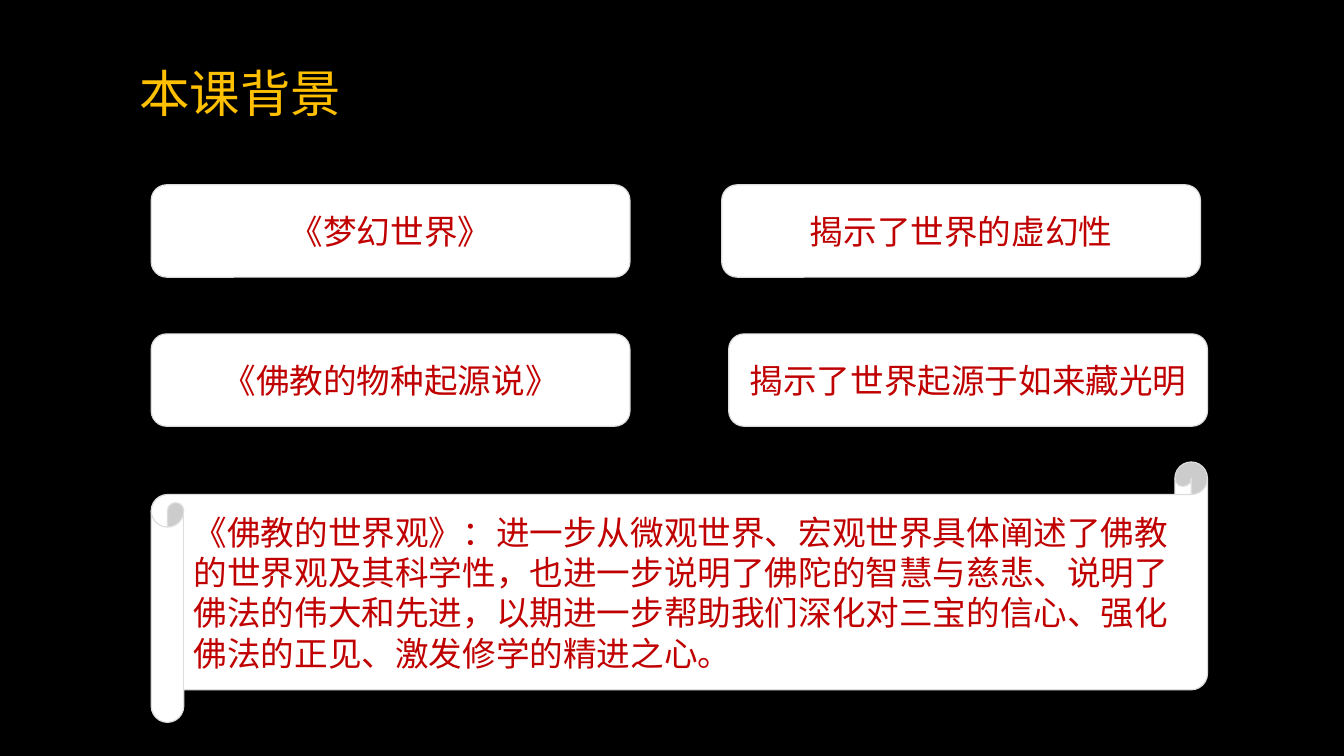
from pptx import Presentation
from pptx.dml.color import RGBColor
from pptx.enum.shapes import MSO_SHAPE
from pptx.enum.text import MSO_ANCHOR, PP_ALIGN
from pptx.oxml.xmlchemy import OxmlElement
from pptx.util import Pt

ROUNDED = MSO_SHAPE.ROUNDED_RECTANGLE
SCROLL = MSO_SHAPE.HORIZONTAL_SCROLL
MIDDLE, BOTTOM = MSO_ANCHOR.MIDDLE, MSO_ANCHOR.BOTTOM
LEFT, CENTER = PP_ALIGN.LEFT, PP_ALIGN.CENTER

FONT = "Noto Sans CJK SC"
COLORS = {"page": "000000", "title": "FFC000", "card": "FFFFFF",
          "edge": "DDDDDD", "text": "C00000"}

TITLE = "本课背景"
# Each row: top, left of the right-hand card, lesson, what it reveals
LESSONS = [
    (132, 515.5, "《梦幻世界》", "揭示了世界的虚幻性"),
    (238.5, 520.5, "《佛教的物种起源说》", "揭示了世界起源于如来藏光明"),
]
SUMMARY = ("《佛教的世界观》：进一步从微观世界、宏观世界具体阐述了佛教的世界观及其科学性，"
           "也进一步说明了佛陀的智慧与慈悲、说明了佛法的伟大和先进，"
           "以期进一步帮助我们深化对三宝的信心、强化佛法的正见、激发修学的精进之心。")
MARGIN, CARD_WIDTH, CARD_HEIGHT = 108, 342, 66


def color(name):
    return RGBColor.from_string(COLORS[name])


def write(shape, text, size, color_name, align, anchor):
    frame = shape.text_frame
    frame.word_wrap = True
    frame.vertical_anchor = anchor
    para = frame.paragraphs[0]
    para.alignment = align
    span = para.add_run()
    span.text = text
    span.font.size = Pt(size)
    span.font.name = FONT
    span.font.color.rgb = color(color_name)
    east_asian = OxmlElement("a:ea")
    east_asian.set("typeface", FONT)
    span.font._element.append(east_asian)
    return frame


def add_title(page, left, top, width, height):
    box = page.shapes.add_textbox(Pt(left), Pt(top), Pt(width), Pt(height))
    frame = write(box, TITLE, 36, "title", LEFT, BOTTOM)
    frame.margin_left = frame.margin_right = Pt(9.5)
    frame.margin_top = frame.margin_bottom = Pt(5)
    frame.paragraphs[0].line_spacing = 0.8


def add_panel(page, kind, left, top, width, height, text, align):
    panel = page.shapes.add_shape(kind, Pt(left), Pt(top), Pt(width), Pt(height))
    panel.shadow.inherit = False
    panel.fill.solid()
    panel.fill.fore_color.rgb = color("card")
    panel.line.color.rgb = color("edge")
    panel.line.width = Pt(0.85)
    write(panel, text, 24, "text", align, MIDDLE)


def add_lessons(page, left, width, height):
    for top, right_left, lesson, meaning in LESSONS:
        for card_left, text in ((left, lesson), (right_left, meaning)):
            add_panel(page, ROUNDED, card_left, top, width, height, text, CENTER)


def main():
    deck = Presentation()
    deck.slide_width, deck.slide_height = Pt(960), Pt(540)
    page = deck.slides.add_slide(deck.slide_layouts[6])
    page.background.fill.solid()
    page.background.fill.fore_color.rgb = color("page")

    # Heading
    add_title(page, 90, 30, 816, 62)
    # Pairs of lesson and meaning
    add_lessons(page, MARGIN, CARD_WIDTH, CARD_HEIGHT)
    # Summary scroll
    add_panel(page, SCROLL, MARGIN, 330, 754.5, 186, SUMMARY, LEFT)

    deck.save("out.pptx")


if __name__ == "__main__":
    main()
